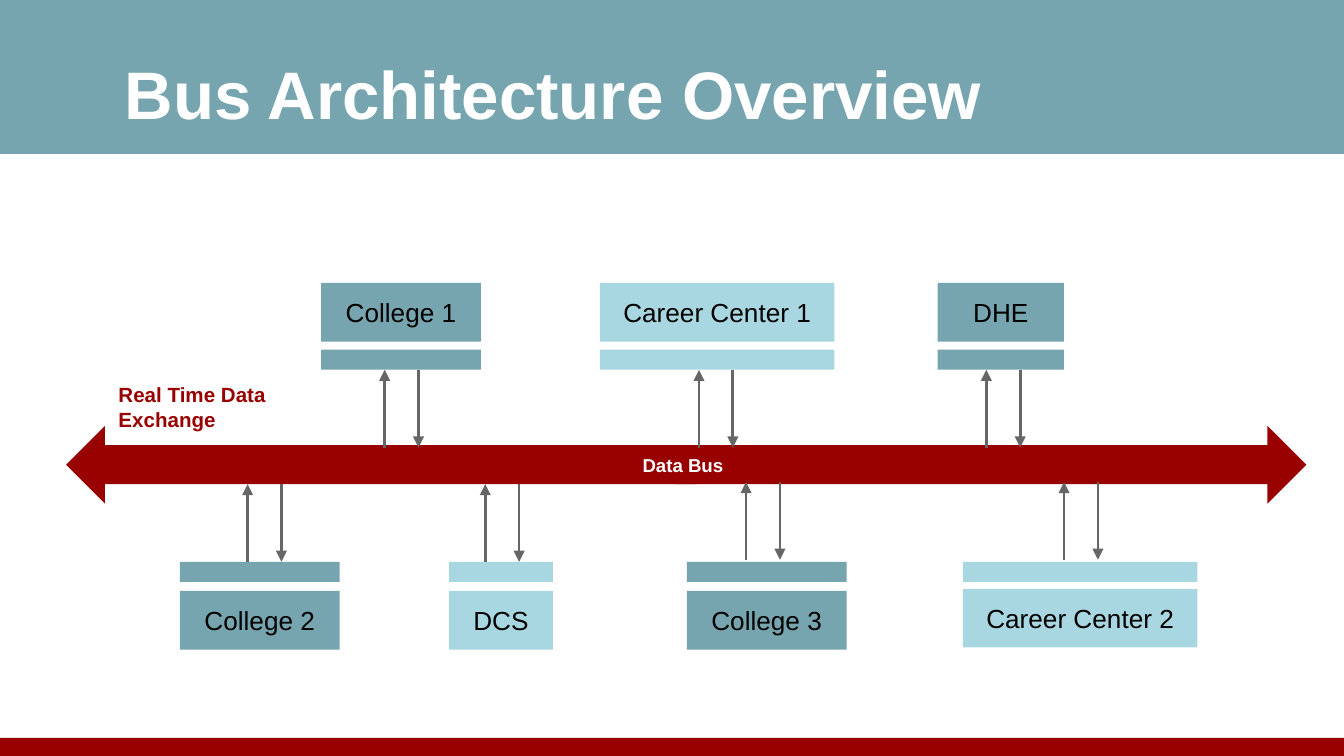
from lxml import etree
from pptx import Presentation
from pptx.dml.color import RGBColor
from pptx.enum.shapes import MSO_CONNECTOR, MSO_SHAPE
from pptx.enum.text import MSO_ANCHOR, MSO_AUTO_SIZE, PP_ALIGN
from pptx.oxml.ns import qn
from pptx.util import Cm, Pt

RECT = MSO_SHAPE.RECTANGLE
LEFT_ARROW, RIGHT_ARROW = MSO_SHAPE.LEFT_ARROW, MSO_SHAPE.RIGHT_ARROW
STRAIGHT = MSO_CONNECTOR.STRAIGHT
TOP, MIDDLE, BOTTOM = MSO_ANCHOR.TOP, MSO_ANCHOR.MIDDLE, MSO_ANCHOR.BOTTOM
LEFT, CENTER = PP_ALIGN.LEFT, PP_ALIGN.CENTER

TEAL = RGBColor(0x76, 0xA5, 0xAF)
SKY = RGBColor(0xA8, 0xD7, 0xE1)
RED = RGBColor(0x99, 0x00, 0x00)
GRAY = RGBColor(0x66, 0x66, 0x66)
WHITE = RGBColor(0xFF, 0xFF, 0xFF)
BLACK = RGBColor(0x00, 0x00, 0x00)

WIDTH, HEIGHT = 25.4, 14.29
BOX_H, STRIP_H, ARROW_H = 1.11, 0.38, 1.47
ARROW_GAP = 0.64
TOP_BOX, TOP_STRIP, TOP_ARROW = 5.35, 6.61, 6.99
LOW_BOX, LOW_STRIP = 11.17, 10.62

TOP_NODES = [
    ("College 1", 6.07, 3.02, 7.27, TEAL),
    ("Career Center 1", 11.34, 4.43, 13.21, SKY),
    ("DHE", 17.72, 2.39, 18.64, TEAL),
]
LOW_NODES = [
    ("College 2", 3.4, 3.02, 4.68, TEAL, LOW_BOX, 9.15),
    ("DCS", 8.49, 1.96, 9.17, SKY, LOW_BOX, 9.15),
    ("College 3", 12.98, 3.02, 14.1, TEAL, LOW_BOX, 9.11),
    ("Career Center 2", 18.2, 4.43, 20.11, SKY, 11.13, 9.11),
]


def set_text(sp, text, size, color, bold=False, align=LEFT, anchor=TOP):
    """Write one formatted paragraph into a shape."""
    tf = sp.text_frame
    tf.text = text
    tf.word_wrap = True
    tf.auto_size = MSO_AUTO_SIZE.NONE
    tf.vertical_anchor = anchor
    tf.margin_left = tf.margin_right = tf.margin_top = tf.margin_bottom = Cm(0.25)
    p = tf.paragraphs[0]
    p.alignment = align
    font = p.runs[0].font
    font.name, font.size, font.bold = "Arial", Pt(size), bold
    font.color.rgb = color


def add_block(s, kind, x, y, w, h, color):
    """Add a flat filled shape without outline."""
    sp = s.shapes.add_shape(kind, Cm(x), Cm(y), Cm(w), Cm(h))
    sp.shadow.inherit = False
    sp.fill.solid()
    sp.fill.fore_color.rgb = color
    sp.line.fill.background()
    return sp


def add_label(s, x, y, w, h, text, size, color, **style):
    """Add a bold text box."""
    sp = s.shapes.add_textbox(Cm(x), Cm(y), Cm(w), Cm(h))
    set_text(sp, text, size, color, bold=True, **style)


def add_arrow(s, x, start, end):
    """Add a vertical arrow pointing at end."""
    line = s.shapes.add_connector(STRAIGHT, Cm(x), Cm(start), Cm(x), Cm(end))
    line.line.color.rgb = GRAY
    line.line.width = Pt(1.5)
    ln = line.line._get_or_add_ln()
    etree.SubElement(ln, qn("a:tailEnd"), type="triangle", w="med", len="med")
    etree.SubElement(line._element.spPr, qn("a:effectLst"))


def add_header(s, x, y, w, h):
    """Add the title band and set the title over it."""
    band = add_block(s, RECT, x, y, w, h, TEAL)
    title = s.shapes.title
    band._element.addnext(title._element)
    title.left, title.top = Cm(x + 2.11), Cm(y + 0.71)
    title.width, title.height = Cm(21.16), Cm(2.06)
    set_text(title, "Bus Architecture Overview", 36, WHITE, bold=True, anchor=BOTTOM)


def add_bus(s, x, y, w, h):
    """Add the two-headed data bus with its labels."""
    half = w / 2
    overlap = 0.2
    add_block(s, LEFT_ARROW, x, y, half + overlap, h, RED)
    add_block(s, RIGHT_ARROW, x + half - overlap, y, half + overlap, h, RED)
    add_label(s, x + 0.74, y - 1.07, 3.38, 1.45, "Real Time Data Exchange", 11, RED)
    add_label(s, x + 2.13, y + 0.38, 19.05, 0.71, "Data Bus", 10, WHITE,
              align=CENTER, anchor=MIDDLE)


def add_node(s, x, w, box_y, strip_y, arrow_x, arrow_y, name, color):
    """Add a system box, its interface strip and its pair of arrows."""
    box = add_block(s, RECT, x, box_y, w, BOX_H, color)
    set_text(box, name, 14, BLACK, align=CENTER, anchor=MIDDLE)
    add_block(s, RECT, x, strip_y, w, STRIP_H, color)
    add_arrow(s, arrow_x, arrow_y + ARROW_H, arrow_y)
    add_arrow(s, arrow_x + ARROW_GAP, arrow_y, arrow_y + ARROW_H)


def main():
    """Build the slide and save it."""
    prs = Presentation()
    prs.slide_width, prs.slide_height = Cm(WIDTH), Cm(HEIGHT)
    s = prs.slides.add_slide(prs.slide_layouts[5])
    add_header(s, 0, 0, WIDTH, 2.91)
    add_block(s, RECT, 0, 13.95, WIDTH, HEIGHT - 13.95, RED)
    add_bus(s, 1.25, 8.05, 23.44, 1.47)
    for name, x, w, arrow_x, color in TOP_NODES:
        add_node(s, x, w, TOP_BOX, TOP_STRIP, arrow_x, TOP_ARROW, name, color)
    for name, x, w, arrow_x, color, box_y, arrow_y in LOW_NODES:
        add_node(s, x, w, box_y, LOW_STRIP, arrow_x, arrow_y, name, color)
    prs.save("out.pptx")


if __name__ == "__main__":
    main()
